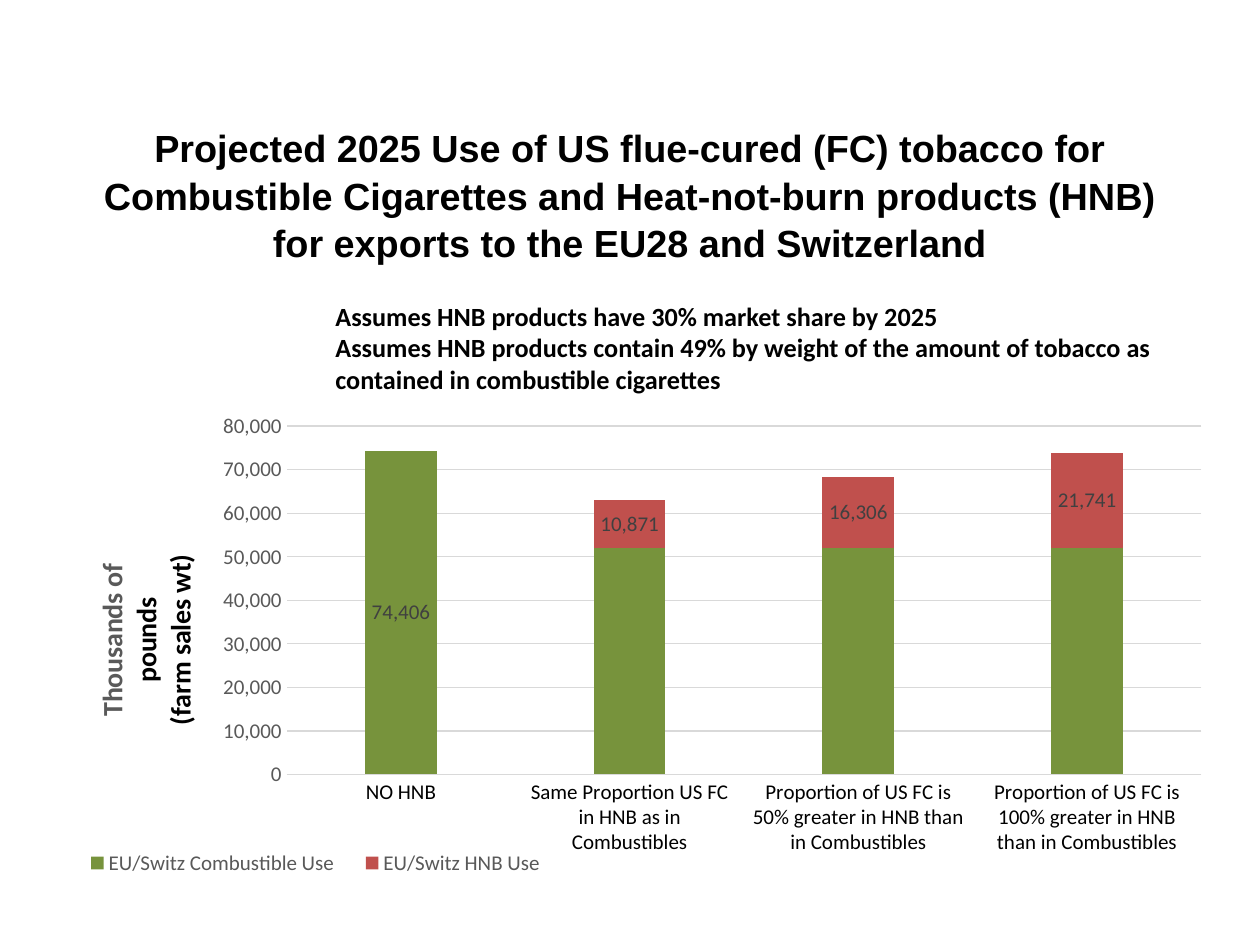
import pptx
import pptx.chart.data
import pptx.dml.color
import pptx.enum.chart
import pptx.enum.text
import pptx.oxml
import pptx.oxml.ns
import pptx.util

RGB = pptx.dml.color.RGBColor
BLACK = RGB(0x00, 0x00, 0x00)
GREEN = RGB(0x77, 0x93, 0x3C)
RED = RGB(0xC0, 0x50, 0x4D)
GRID = RGB(0xD9, 0xD9, 0xD9)
GREY = RGB(0x59, 0x59, 0x59)
DARK = RGB(0x40, 0x40, 0x40)

Pt = pptx.util.Pt
qn = pptx.oxml.ns.qn

TITLE = ("Projected 2025 Use of US flue-cured (FC) tobacco for Combustible "
         "Cigarettes and Heat-not-burn products (HNB) for exports to the "
         "EU28 and Switzerland")
NOTES = ("Assumes HNB products have 30% market share by 2025\v"
         "Assumes HNB products contain 49% by weight of the amount of "
         "tobacco as contained in combustible cigarettes")
CATS = ["NO HNB",
        "Same Proportion US FC in HNB as in Combustibles",
        "Proportion of US FC is 50% greater in HNB than in Combustibles",
        "Proportion of US FC is 100% greater in HNB than in Combustibles"]
SERIES = [("EU/Switz Combustible Use", [74406, 52084, 52084, 52084], GREEN),
          ("EU/Switz HNB Use", [None, 10871, 16306, 21741], RED)]
UNITS = [("Thousands of", GREY), ("pounds", BLACK), ("(farm sales wt)", BLACK)]


def px(n):
    return pptx.util.Emu(round(n * 914400 / 126))


def style(font, size, color, bold=False, name="Calibri"):
    font.size, font.bold, font.name = Pt(size), bold, name
    font.color.rgb = color


def place(parent, after, inner=False, **spots):
    """Give a chart part a manual layout, as fractions of the chart."""
    for old in parent.findall(qn("c:layout")):
        parent.remove(old)
    target = '<c:layoutTarget val="inner"/>' if inner else ""
    modes = "".join(f'<c:{k}Mode val="edge"/>' for k in spots if k in "xy")
    sizes = "".join(f'<c:{k} val="{v}"/>' for k, v in spots.items())
    layout = pptx.oxml.parse_xml(
        f'<c:layout {pptx.oxml.ns.nsdecls("c")}><c:manualLayout>'
        f'{target}{modes}{sizes}</c:manualLayout></c:layout>')
    if after:
        parent.find(qn(after)).addnext(layout)
    else:
        parent.insert(0, layout)


def add_title(slide, x, y, w, h):
    title = slide.shapes.title
    title.left, title.top, title.width, title.height = map(px, (x, y, w, h))
    frame = title.text_frame
    frame.text = TITLE
    frame.word_wrap = True
    frame.auto_size = pptx.enum.text.MSO_AUTO_SIZE.NONE
    frame.vertical_anchor = pptx.enum.text.MSO_ANCHOR.MIDDLE
    frame.margin_top, frame.margin_bottom = 0, px(34)
    para = frame.paragraphs[0]
    para.alignment = pptx.enum.text.PP_ALIGN.CENTER
    para.line_spacing = 1.05
    style(para.font, 21.6, BLACK, True, "Arial")


def add_notes(slide, x, y, w, h):
    frame = slide.shapes.add_textbox(*map(px, (x, y, w, h))).text_frame
    frame.word_wrap = True
    frame.text = NOTES
    style(frame.paragraphs[0].font, 15, BLACK, True)


def set_axes(chart):
    none = pptx.enum.chart.XL_TICK_MARK.NONE
    cat, val = chart.category_axis, chart.value_axis
    for axis, color in ((cat, BLACK), (val, GREY)):
        axis.major_tick_mark = axis.minor_tick_mark = none
        style(axis.tick_labels.font, 12, color)
    val.minimum_scale, val.maximum_scale, val.major_unit = 0, 80000, 10000
    val.tick_labels.number_format = "#,##0"
    val.tick_labels.number_format_is_linked = False
    val.format.line.fill.background()
    for line in (cat.format.line, val.major_gridlines.format.line):
        line.color.rgb, line.width = GRID, Pt(0.75)

    frame = val.axis_title.text_frame
    for i, (text, color) in enumerate(UNITS):
        para = frame.add_paragraph() if i else frame.paragraphs[0]
        run = para.add_run()
        run.text = text
        style(run.font, 16, color, True)
    body = frame._txBody.find(qn("a:bodyPr"))
    body.set("rot", "-5400000")
    body.set("vert", "horz")
    place(val.axis_title._element, "c:tx", x=0.03, y=0.35)


def set_series(plot):
    plot.gap_width, plot.overlap = 219, 100
    plot.vary_by_categories = False
    for series, (_, _, color) in zip(plot.series, SERIES):
        series.invert_if_negative = False
        series.format.fill.solid()
        series.format.fill.fore_color.rgb = color
    burn, heat = plot.series
    style(burn.points[0].data_label.font, 12, DARK)
    burn.data_labels.show_value = False
    labels = heat.data_labels
    labels.show_value = True
    labels.number_format, labels.number_format_is_linked = "#,##0", False
    style(labels.font, 12, DARK)


def add_chart(slide, x, y, w, h):
    data = pptx.chart.data.CategoryChartData(number_format="#,##0")
    data.categories = CATS
    for name, values, _ in SERIES:
        data.add_series(name, values)
    kind = pptx.enum.chart.XL_CHART_TYPE.COLUMN_STACKED
    chart = slide.shapes.add_chart(kind, *map(px, (x, y, w, h)), data).chart
    chart.has_title = False
    style(chart.font, 10, BLACK)
    set_axes(chart)
    set_series(chart.plots[0])
    chart.has_legend = True
    legend = chart.legend
    legend.position = pptx.enum.chart.XL_LEGEND_POSITION.BOTTOM
    legend.include_in_layout = False
    style(legend.font, 12, GREY)
    place(legend._element, "c:legendPos", x=0.01, y=0.91, w=0.43, h=0.08)
    area = chart._chartSpace.chart.plotArea
    place(area, None, True, x=0.2, y=0.11, w=0.79, h=0.67)


def main():
    deck = pptx.Presentation()
    deck.slide_width, deck.slide_height = px(1260), px(945)
    slide = deck.slides.add_slide(deck.slide_layouts[5])
    add_title(slide, 87, 129, 1086, 164)
    add_chart(slide, 55, 369, 1158, 520)
    add_notes(slide, 323, 294, 850, 108)
    deck.save("out.pptx")


if __name__ == "__main__":
    main()
